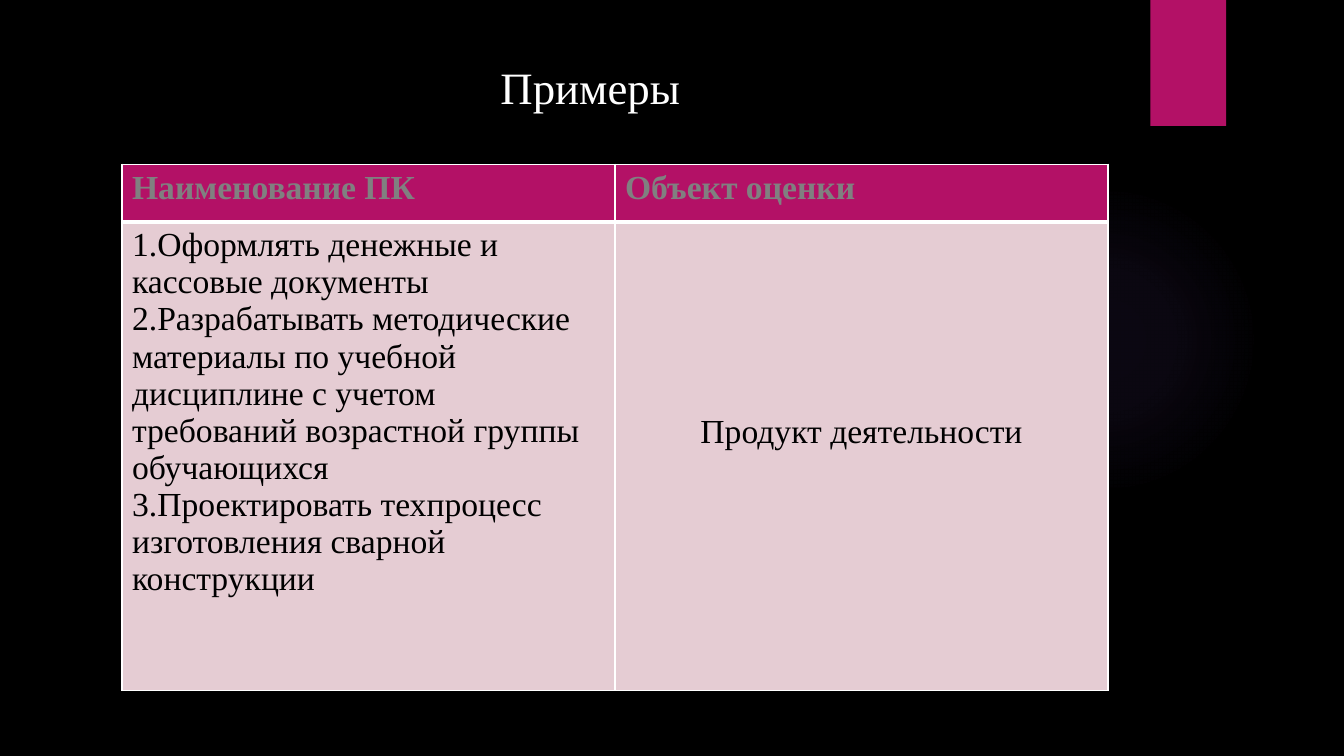
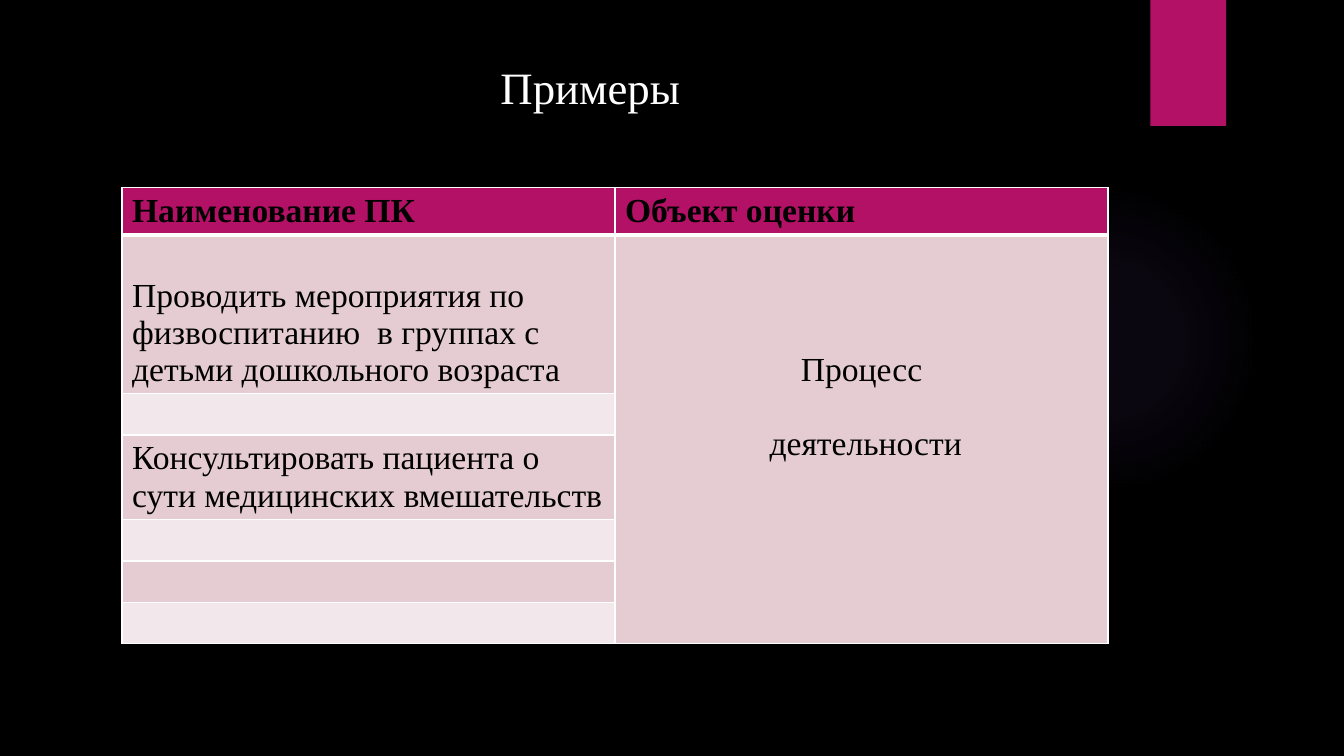
from lxml import etree
from pptx import Presentation
from pptx import util as u
from pptx.dml.color import RGBColor
from pptx.enum import shapes, text
from pptx.oxml import ns, parse_xml

COLORS = {"back": "000000", "accent": "B31166", "glow": "9B6BF2",
          "title": "FFFFFF", "line": "FFFFFF", "text": "000000",
          "muted": "808080", "band1": "E5CCD3", "band2": "F2E7EA"}
FONT = "Times New Roman"
HEADERS = ["Наименование ПК", "Объект оценки"]
LINE = 0.37  # height of one table text line, inches

prs = Presentation()
prs.slide_width, prs.slide_height = u.Inches(13.33), u.Inches(7.5)


def rgb(name):
    return RGBColor.from_string(COLORS[name])


def box(x, y, w, h):
    """Turn percentages of the slide into a left, top, width, height box."""
    return (int(prs.slide_width * x / 100), int(prs.slide_height * y / 100),
            int(prs.slide_width * w / 100), int(prs.slide_height * h / 100))


def style(p, size, color, bold=False, align=None):
    p.alignment = align
    for r in p.runs:
        r.font.name, r.font.size, r.font.bold = FONT, u.Pt(size), bold
        r.font.color.rgb = rgb(color)


# Shared look: background, glow and accent tab
def glow_fill():
    stops = "".join(
        f'<a:gs pos="{pos * 1000}"><a:srgbClr val="{COLORS["glow"]}">'
        f'<a:alpha val="{alpha * 1000}"/></a:srgbClr></a:gs>'
        for pos, alpha in [(0, 7), (36, 6), (69, 0), (100, 0)])
    return parse_xml(
        f'<a:gradFill {ns.nsdecls("a")}><a:gsLst>{stops}</a:gsLst>'
        '<a:path path="circle"><a:fillToRect l="50000" t="50000" '
        'r="50000" b="50000"/></a:path></a:gradFill>')


def decorate_master(s):
    master = prs.slide_master
    master.background.fill.solid()
    master.background.fill.fore_color.rgb = rgb("back")
    glow = s.shapes.add_shape(shapes.MSO_SHAPE.OVAL, *box(70.59, 24.4, 23.11, 41.07))
    tab = s.shapes.add_shape(shapes.MSO_SHAPE.RECTANGLE, *box(85.6, 0, 5.63, 16.67))
    tab.fill.solid()
    tab.fill.fore_color.rgb = rgb("accent")
    for i, sp in enumerate([glow, tab]):
        sp.shadow.inherit = False
        sp.line.fill.background()
        sp.element.xpath(".//p:cNvPr")[0].set("id", str(100 + i))
        master.shapes.element.insert(2 + i, sp.element)
    glow.element.spPr.find(ns.qn("a:prstGeom")).addnext(glow_fill())


def add_title(s, title):
    sp = s.shapes.title
    sp.left, sp.top, sp.width, sp.height = box(5.33, 6.67, 77.19, 9.6)
    tf = sp.text_frame
    tf.text = title
    tf.auto_size = text.MSO_AUTO_SIZE.NONE
    tf.vertical_anchor = text.MSO_ANCHOR.MIDDLE
    style(tf.paragraphs[0], 32, "title", align=text.PP_ALIGN.CENTER)


# Table parts
def set_borders(cell, top, bottom):
    tcPr = cell._tc.get_or_add_tcPr()
    for side, width in [("L", 1), ("R", 1), ("T", top), ("B", bottom)]:
        ln = etree.SubElement(tcPr, ns.qn(f"a:ln{side}"), w=str(u.Pt(width)))
        fill = etree.SubElement(ln, ns.qn("a:solidFill"))
        etree.SubElement(fill, ns.qn("a:srgbClr"), val=COLORS["line"])


def fill_cell(cell, lines, skip=0, gap=0, **look):
    """Write the lines, starting a number of text lines below the top."""
    cell.margin_top = u.Inches(0.05 + skip * LINE)
    cell.text_frame.text = "\n".join(lines)
    for i, p in enumerate(cell.text_frame.paragraphs):
        style(p, 24, **look)
        if i and gap:
            p.space_before = u.Pt(gap)


def add_examples(top, heights, header_color, tasks, target):
    """Slide with tasks on the left and one assessed object on the right."""
    s = prs.slides.add_slide(prs.slide_layouts[5])
    add_title(s, "Примеры")
    area = box(9.08, top, 73.37, sum(heights))
    table = s.shapes.add_table(len(heights), len(HEADERS), *area).table
    for row, height in zip(table.rows, heights):
        row.height = box(0, 0, 0, height)[3]
    for r in range(len(heights)):
        for c, header in enumerate(HEADERS):
            cell = table.cell(r, c)
            set_borders(cell, 3 if r == 1 else 1, 3 if r == 0 else 1)
            band = "accent" if r == 0 else "band1" if r % 2 or c else "band2"
            cell.fill.solid()
            cell.fill.fore_color.rgb = rgb(band)
            if r == 0:
                fill_cell(cell, [header], color=header_color, bold=True)
    for r, task in tasks.items():
        fill_cell(table.cell(r, 0), color="text", **task)
    if len(heights) > 2:
        table.cell(1, 1).merge(table.cell(len(heights) - 1, 1))
    fill_cell(table.cell(1, 1), color="text", align=text.PP_ALIGN.CENTER, **target)
    return s


def main():
    # Product of the activity
    first = add_examples(
        21.73, [7.6, 62], "muted",
        {1: {"lines": [
            "1.Оформлять денежные и кассовые документы",
            "2.Разрабатывать методические материалы по учебной дисциплине "
            "с учетом требований возрастной группы обучающихся",
            "3.Проектировать техпроцесс изготовления сварной конструкции"]}},
        {"lines": ["Продукт деятельности"], "skip": 5})
    decorate_master(first)

    # Process of the activity
    add_examples(
        24.8, [6.27, 20.93, 5.47, 11.2, 5.47, 5.47, 5.47], "text",
        {1: {"lines": ["Проводить мероприятия по физвоспитанию  в группах "
                       "с детьми дошкольного возраста"], "skip": 1},
         3: {"lines": ["Консультировать пациента о сути медицинских вмешательств"]}},
        {"lines": ["Процесс", " деятельности"], "skip": 3, "gap": 26.5})
    prs.save("out.pptx")


if __name__ == "__main__":
    main()
